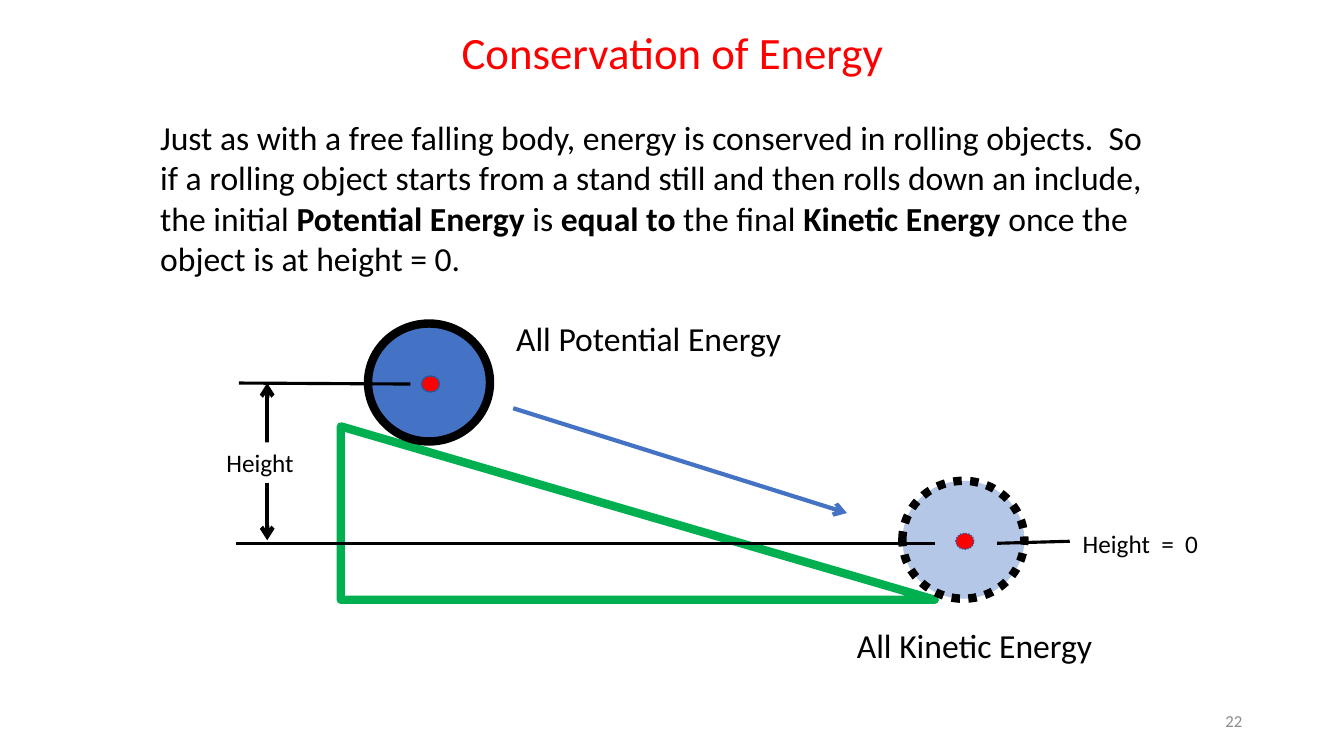
from dataclasses import dataclass

from lxml import etree
from pptx import Presentation
from pptx.dml.color import RGBColor
from pptx.enum.dml import MSO_LINE
from pptx.enum.shapes import MSO_CONNECTOR, MSO_SHAPE
from pptx.enum.text import MSO_ANCHOR, PP_ALIGN
from pptx.oxml.ns import qn
from pptx.util import Inches, Pt

STRAIGHT = MSO_CONNECTOR.STRAIGHT
ELLIPSE = MSO_SHAPE.OVAL
RIGHT_TRIANGLE = MSO_SHAPE.RIGHT_TRIANGLE
DOTTED = MSO_LINE.ROUND_DOT
LEFT, CENTER, RIGHT = PP_ALIGN.LEFT, PP_ALIGN.CENTER, PP_ALIGN.RIGHT
TOP, MIDDLE = MSO_ANCHOR.TOP, MSO_ANCHOR.MIDDLE


@dataclass(frozen=True)
class Theme:
    font: str = "Calibri"
    black: str = "000000"
    white: str = "FFFFFF"
    red: str = "FF0000"
    green: str = "00B050"
    blue: str = "4472C4"
    pale_blue: str = "B4C7E7"
    dark_blue: str = "325491"
    gray: str = "8C8C8C"
    title_size: int = 32
    body_size: int = 24
    label_size: int = 18
    number_size: int = 12
    thick: float = 6
    arrow: float = 3
    level: float = 2.25
    thin: float = 1


class SlideBuilder:
    def __init__(self, slide, theme):
        self.slide = slide
        self.theme = theme

    def text(self, box, runs, size, color=None, align=LEFT, anchor=TOP, fill=None):
        """Add a text box; runs is a list of (wording, bold) pairs."""
        shape = self.slide.shapes.add_textbox(*map(Inches, box))
        if fill:
            shape.fill.solid()
            shape.fill.fore_color.rgb = RGBColor.from_string(fill)
        frame = shape.text_frame
        frame.word_wrap = True
        frame.vertical_anchor = anchor
        paragraph = frame.paragraphs[0]
        paragraph.alignment = align
        for wording, bold in runs:
            run = paragraph.add_run()
            run.text = wording
            run.font.name = self.theme.font
            run.font.size = Pt(size)
            run.font.bold = bold
            run.font.color.rgb = RGBColor.from_string(color or self.theme.black)

    def shape(self, kind, box, line, width, fill=None, dash=None, parent=None):
        shapes = (parent or self.slide).shapes
        shape = shapes.add_shape(kind, *map(Inches, box))
        shape.shadow.inherit = False
        if fill:
            shape.fill.solid()
            shape.fill.fore_color.rgb = RGBColor.from_string(fill)
        else:
            shape.fill.background()
        shape.line.color.rgb = RGBColor.from_string(line)
        shape.line.width = Pt(width)
        if dash:
            shape.line.dash_style = dash

    def wheel(self, left, top, fill, dash=None):
        """Add a rolling disc grouped with the red dot at its center."""
        theme = self.theme
        group = self.slide.shapes.add_group_shape()
        self.shape(ELLIPSE, (left, top, 1.21, 1.17), theme.black, theme.thick,
                   fill, dash, group)
        self.shape(ELLIPSE, (left + 0.53, top + 0.52, 0.18, 0.16), theme.dark_blue,
                   theme.thin, theme.red, dash, group)

    def line(self, start, end, width, color=None, arrowheads=()):
        """Add a straight line; arrowheads may name headEnd and tailEnd."""
        connector = self.slide.shapes.add_connector(
            STRAIGHT, *map(Inches, (*start, *end)))
        connector.line.color.rgb = RGBColor.from_string(color or self.theme.black)
        connector.line.width = Pt(width)
        outline = connector.line._get_or_add_ln()
        for arrowhead in arrowheads:
            etree.SubElement(outline, qn(f"a:{arrowhead}"), type="arrow")
        etree.SubElement(connector._element.spPr, qn("a:effectLst"))


def main():
    presentation = Presentation()
    presentation.slide_width = Inches(13.33)
    presentation.slide_height = Inches(7.5)
    slide = presentation.slides.add_slide(presentation.slide_layouts[6])
    theme = Theme()
    builder = SlideBuilder(slide, theme)

    builder.text((9.42, 6.95, 3, 0.4), [("22", False)], theme.number_size,
                 theme.gray, RIGHT, MIDDLE)
    builder.text((4.07, 0.2, 5.2, 0.64), [("Conservation of Energy", False)],
                 theme.title_size, theme.red, CENTER)
    builder.text((1.49, 1.11, 10.07, 1.72), [
        ("Just as with a free falling body, energy is conserved in rolling objects.  "
         "So if a rolling object starts from a stand still and then rolls down an "
         "include, the initial ", False),
        ("Potential Energy ", True),
        ("is ", False),
        ("equal to ", True),
        ("the final ", False),
        ("Kinetic Energy ", True),
        ("once the object is at height = 0.", False),
    ], theme.body_size)

    # Ramp with the wheel at its start and end
    builder.shape(RIGHT_TRIANGLE, (3.38, 4.23, 5.89, 1.72), theme.green, theme.thick)
    builder.wheel(3.65, 3.21, theme.blue)
    builder.wheel(8.95, 4.77, theme.pale_blue, DOTTED)

    # Height levels, height measure and rolling direction
    builder.line((2.37, 3.8), (4.07, 3.81), theme.level)
    builder.line((2.34, 5.39), (9.27, 5.39), theme.level)
    builder.line((2.65, 3.8), (2.65, 5.36), theme.arrow,
                 arrowheads=("headEnd", "tailEnd"))
    builder.line((5.09, 4.05), (8.4, 5.09), theme.arrow, theme.blue, ("tailEnd",))

    builder.text((2, 4.39, 1.16, 0.4), [("Height", False)], theme.label_size,
                 align=CENTER, fill=theme.white)
    for left, top, wording in ((5.02, 3.1, "All Potential Energy"),
                               (8.4, 6.15, "All Kinetic Energy")):
        builder.text((left, top, 3.39, 0.5), [(wording, False)], theme.body_size)
    builder.line((9.89, 5.39), (10.61, 5.37), theme.level)
    builder.text((10.64, 5.19, 1.51, 0.4), [("Height  =  0", False)],
                 theme.label_size, fill=theme.white)

    presentation.save("out.pptx")


if __name__ == "__main__":
    main()
